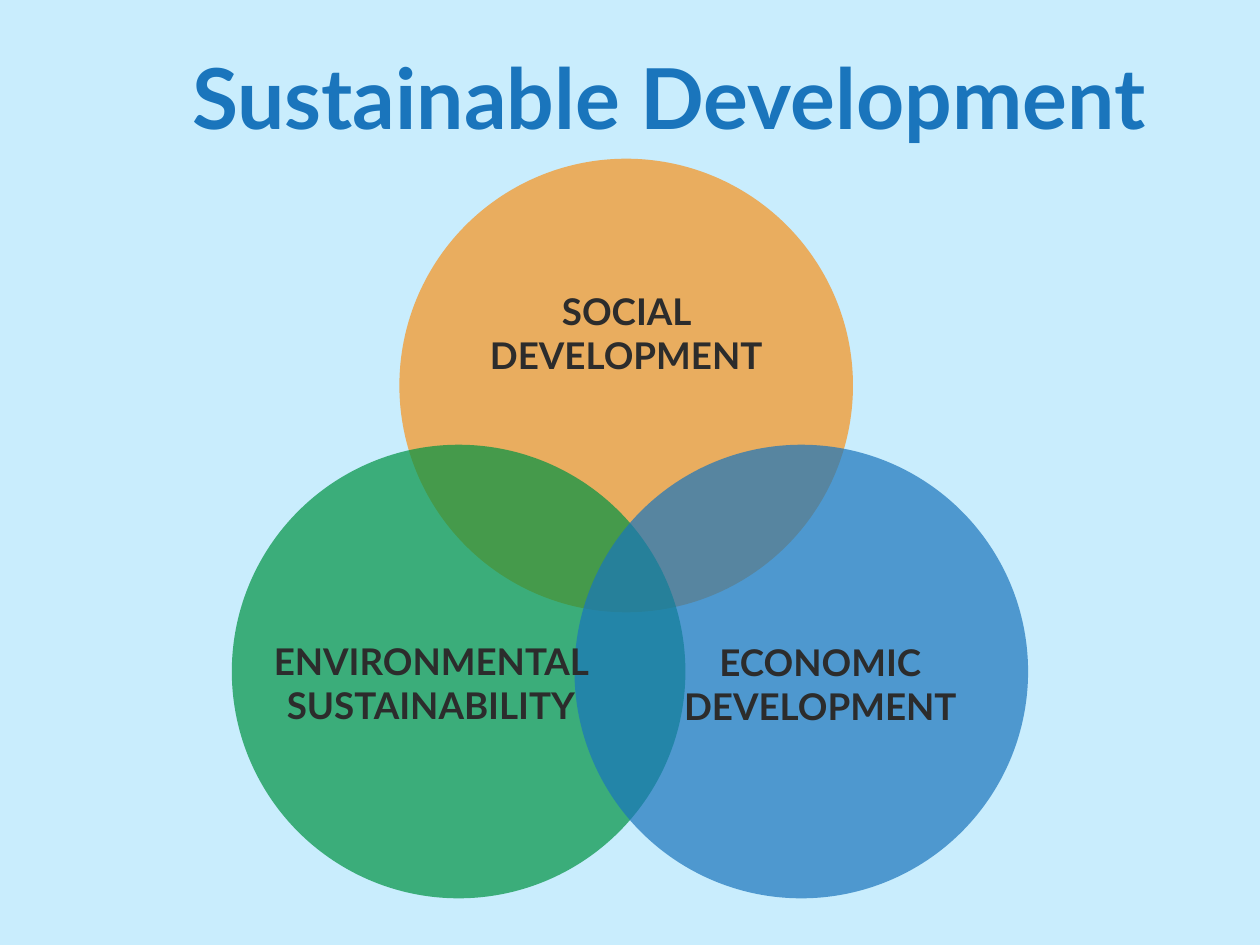
from lxml.etree import SubElement
from pptx import Presentation
from pptx.dml.color import RGBColor
from pptx.enum.shapes import MSO_SHAPE as Shape
from pptx.enum.text import MSO_AUTO_SIZE as AutoSize, PP_ALIGN as Align
from pptx.oxml.ns import qn
from pptx.util import Inches, Pt

DIAMETER = 3.6
CIRCLES = [
    (3.17, 1.26, "F7921C"),
    (1.84, 3.53, "009343"),
    (4.56, 3.53, "1A75BC"),
]
LABELS = [
    ("SOCIAL DEVELOPMENT", (3.42, 2.25, 3.1, 0.78)),
    ("ENVIRONMENTAL SUSTAINABILITY", (1.98, 5.03, 2.88, 0.78)),
    ("ECONOMIC\nDEVELOPMENT", (5.22, 5.04, 2.58, 0.78)),
]


def paint(fill, color, opacity=100):
    fill.solid()
    fill.fore_color.rgb = RGBColor.from_string(color)
    if opacity < 100:
        tint = fill._xPr.find(qn("a:solidFill"))[0]
        SubElement(tint, qn("a:alpha"), val=str(opacity * 1000))


def add_text(page, text, box, size, color):
    frame = page.shapes.add_textbox(*map(Inches, box)).text_frame
    frame.word_wrap = True
    frame.auto_size = AutoSize.SHAPE_TO_FIT_TEXT
    frame.margin_left = frame.margin_right = Inches(0.07)
    frame.margin_top = frame.margin_bottom = Inches(0.04)
    frame.text = text
    for para in frame.paragraphs:
        para.alignment = Align.CENTER
        for span in para.runs:
            span.font.name = "Lato"
            span.font.size = Pt(size)
            span.font.bold = True
            paint(span.font.fill, color)


def add_circle(page, box, color):
    circle = page.shapes.add_shape(Shape.OVAL, *map(Inches, box))
    circle.shadow.inherit = False
    circle.line.fill.background()
    paint(circle.fill, color, 70)


def add_venn(page):
    for left, top, color in CIRCLES:
        add_circle(page, (left, top, DIAMETER, DIAMETER), color)
    for text, box in LABELS:
        add_text(page, text, box, 21, "2C2C2C")


def main():
    deck = Presentation()
    deck.slide_width, deck.slide_height = Inches(10), Inches(7.5)
    page = deck.slides.add_slide(deck.slide_layouts[6])
    paint(page.background.fill, "C9EDFD")
    add_text(page, "Sustainable Development", (1.06, 0.32, 8.5, 0.88), 48, "1A75BC")
    add_venn(page)
    deck.save("out.pptx")


if __name__ == "__main__":
    main()
